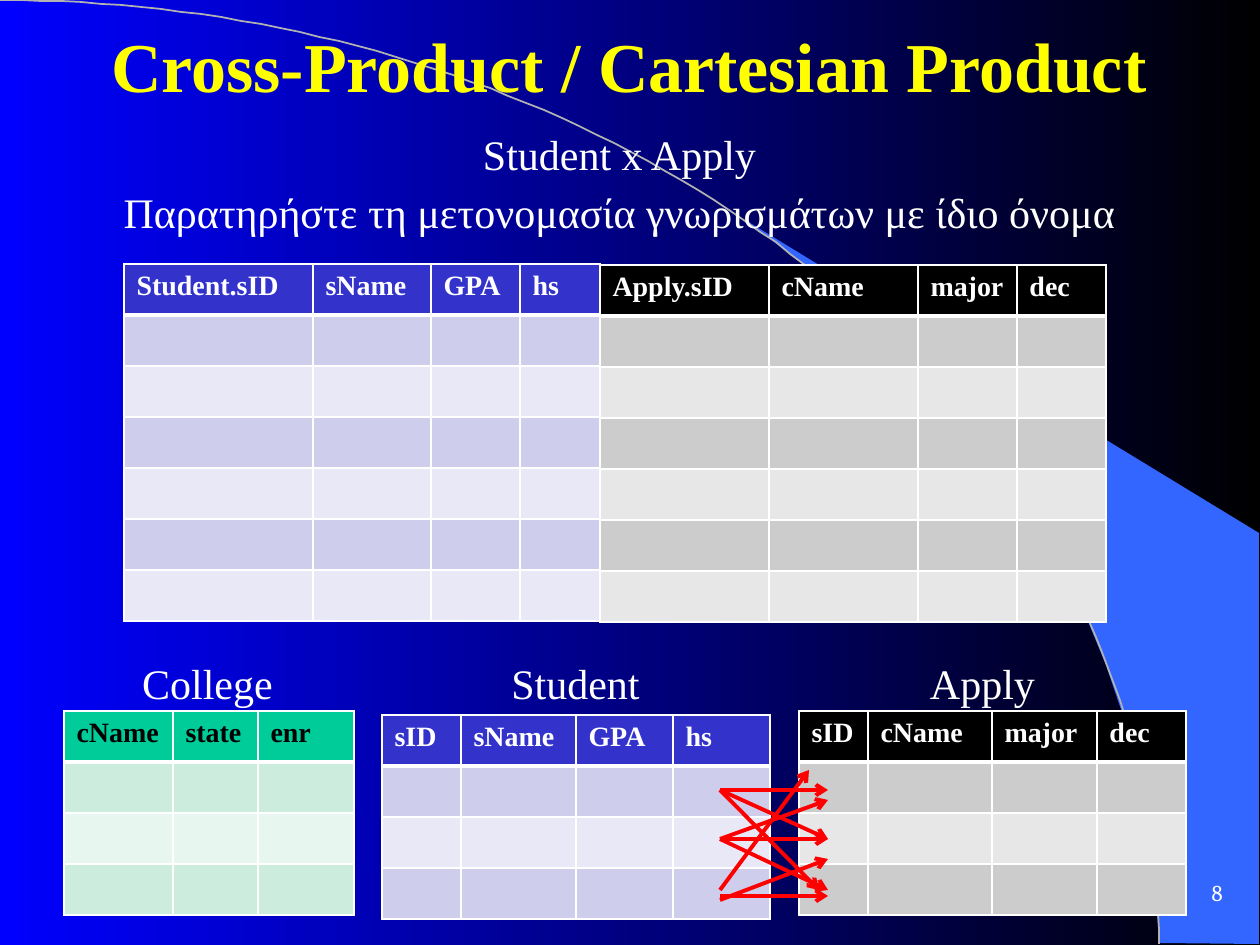
from math import cos, pi, sin

from lxml import etree
from pptx import Presentation
from pptx.dml.color import RGBColor
from pptx.enum.shapes import MSO_CONNECTOR
from pptx.enum.text import MSO_ANCHOR, MSO_AUTO_SIZE, PP_ALIGN
from pptx.oxml.ns import qn
from pptx.util import Pt

PX = 914400 / 126  # EMU per px
CENTER, LEFT, RIGHT = PP_ALIGN.CENTER, PP_ALIGN.LEFT, PP_ALIGN.RIGHT
TOP, MIDDLE = MSO_ANCHOR.TOP, MSO_ANCHOR.MIDDLE
NO_FIT, GROW = MSO_AUTO_SIZE.NONE, MSO_AUTO_SIZE.SHAPE_TO_FIT_TEXT
STRAIGHT = MSO_CONNECTOR.STRAIGHT

COLORS = {
    "blue": "0000FF", "black": "000000", "white": "FFFFFF", "yellow": "FFFF00",
    "red": "FF0000", "wedge": "3366FF", "arc": "B2B2B2",
}
# Table palettes: header fill, header text, odd rows, even rows
PALETTES = {
    "college": ("00CC99", "000000", "CCECDE", "E7F6EF"),
    "student": ("3333CC", "FFFFFF", "CECEEC", "E8E8F6"),
    "apply": ("000000", "FFFFFF", "CCCCCC", "E7E7E7"),
}


def emu(*lengths):
    return [round(v * PX) for v in lengths]


def rgb(color):
    return RGBColor.from_string(COLORS.get(color, color))


def write(p, text, size=24, color="white", bold=False, align=LEFT,
          font="Times New Roman", before=0):
    p.alignment = align
    p.space_before = Pt(before)
    r = p.add_run()
    r.text = text
    r.font.name, r.font.size, r.font.bold = font, Pt(size), bold
    r.font.color.rgb = rgb(color)


class Deck:
    row_height = 51
    cell_size = 16

    def __init__(self, width, height):
        self.prs = Presentation()
        self.prs.slide_width, self.prs.slide_height = emu(width, height)
        self.s = self.prs.slides.add_slide(self.prs.slide_layouts[1])

    def background(self, start, end):
        fill = self.s.background.fill
        fill.gradient()
        fill.gradient_angle = 0
        for stop, color in zip(fill.gradient_stops, (start, end)):
            stop.color.rgb = rgb(color)
        fill.gradient_stops[0].position = 0
        fill.gradient_stops[1].position = 1

    def freeform(self, points, fill=None, line=None):
        builder = self.s.shapes.build_freeform(*points[0], scale=PX)
        builder.add_line_segments(points[1:], close=fill is not None)
        sp = builder.convert_to_shape()
        sp.shadow.inherit = False
        if fill:
            sp.fill.solid()
            sp.fill.fore_color.rgb = rgb(fill)
        else:
            sp.fill.background()
        if line:
            sp.line.color.rgb = rgb(line)
            sp.line.width = Pt(1)
        else:
            sp.line.fill.background()

    def placeholder(self, idx, box, lines, anchor=TOP, top_inset=6, before=0, **fmt):
        sp = self.s.placeholders[idx]
        self.s.shapes._spTree.append(sp._element)  # above the backdrop
        sp.left, sp.top, sp.width, sp.height = emu(*box)
        tf = sp.text_frame
        tf.word_wrap, tf.auto_size, tf.vertical_anchor = True, NO_FIT, anchor
        tf.margin_top = emu(top_inset)[0]
        for i, line in enumerate(lines):
            p = tf.add_paragraph() if i else tf.paragraphs[0]
            pPr = p._p.get_or_add_pPr()
            pPr.set("marL", "0")
            pPr.set("indent", "0")
            etree.SubElement(pPr, qn("a:buNone"))
            write(p, line, align=CENTER, before=before if i else 0, **fmt)

    def text(self, box, text, anchor=TOP, fit=GROW, **fmt):
        tf = self.s.shapes.add_textbox(*emu(*box)).text_frame
        tf.word_wrap, tf.auto_size, tf.vertical_anchor = True, fit, anchor
        write(tf.paragraphs[0], text, **fmt)

    def border(self, cell, side, width):
        ln = etree.SubElement(cell._tc.get_or_add_tcPr(), qn(f"a:ln{side}"),
                              w=str(Pt(width)))
        fill = etree.SubElement(ln, qn("a:solidFill"))
        etree.SubElement(fill, qn("a:srgbClr"), val=COLORS["white"])

    def table(self, left, top, columns, body_rows, palette):
        header, ink, odd, even = PALETTES[palette]
        rows = body_rows + 1
        box = emu(left, top, sum(columns.values()), rows * self.row_height)
        table = self.s.shapes.add_table(rows, len(columns), *box).table
        table.horz_banding = False
        for column, width in zip(table.columns, columns.values()):
            column.width = emu(width)[0]
        for i, row in enumerate(table.rows):
            row.height = emu(self.row_height)[0]
            for name, cell in zip(columns, row.cells):
                for side in "LRTB":
                    thick = (i, side) in ((0, "B"), (1, "T"))
                    self.border(cell, side, 3 if thick else 1)
                cell.fill.solid()
                cell.fill.fore_color.rgb = rgb((odd if i % 2 else even) if i else header)
                p = cell.text_frame.paragraphs[0]
                if i:
                    etree.SubElement(p._p, qn("a:endParaRPr"),
                                     sz=str(self.cell_size * 100))
                else:
                    write(p, name, size=self.cell_size, color=ink, bold=True)

    def arrow(self, start, end):
        c = self.s.shapes.add_connector(STRAIGHT, *emu(*start, *end))
        c.line.color.rgb = rgb("red")
        c.line.width = Pt(2.25)
        etree.SubElement(c.line._get_or_add_ln(), qn("a:tailEnd"), type="arrow")
        etree.SubElement(c._element.spPr, qn("a:effectLst"))


def main():
    d = Deck(1260, 945)

    # Backdrop: gradient, blue wedge and quarter-ellipse arc
    d.background("blue", "black")
    d.freeform([(1159, 943), (1259, 944), (1259, 533), (742, 218), (786, 251),
                (823, 280), (863, 315), (902, 353), (960, 416), (1012, 484),
                (1048, 543), (1081, 604), (1106, 665), (1125, 721), (1138, 767),
                (1150, 827), (1155, 877)], fill="wedge")
    steps = 90
    angles = [pi / 2 * i / steps for i in range(steps + 1)]
    d.freeform([(1159 * sin(a), 944 * (1 - cos(a))) for a in angles], line="arc")

    # Slide number, title and body
    d.text((1164, 861, 71, 63), "8", anchor=MIDDLE, fit=NO_FIT, size=13,
           align=RIGHT, font="Cambria")
    d.placeholder(0, (88, 0, 1082, 129), ["Cross-Product / Cartesian Product"],
                  anchor=MIDDLE, size=40, color="yellow", bold=True)
    d.placeholder(1, (84, 116, 1071, 567),
                  ["Student x Apply",
                   "Παρατηρήστε τη μετονομασία γνωρισμάτων με ίδιο όνομα"],
                  top_inset=12, before=4.8)

    # Source relations
    d.table(64, 711, {"cName": 109, "state": 85, "enr": 96}, 3, "college")
    d.table(382, 715, {"sID": 79, "sName": 115, "GPA": 97, "hs": 97}, 3, "student")
    d.table(799, 711, {"sID": 69, "cName": 124, "major": 105, "dec": 89}, 3, "apply")
    for left, name in ((113, "College"), (481, "Student"), (888, "Apply")):
        d.text((left, 651, 189, 64), name, align=CENTER)

    # Cross-product result
    d.table(124, 264, {"Student.sID": 189, "sName": 118, "GPA": 89, "hs": 80},
            6, "student")
    d.table(600, 265, {"Apply.sID": 169, "cName": 149, "major": 99, "dec": 89},
            6, "apply")

    # Every Student row pairs with every Apply row
    pairs = {
        790: [(828, 790), (828, 839), (819, 890)],
        839: [(828, 839), (828, 890), (828, 800)],
        896: [(828, 896)],
        890: [(809, 770)],
        900: [(828, 859)],
    }
    for y, ends in pairs.items():
        for end in ends:
            d.arrow((720, y), end)

    d.prs.save("out.pptx")


if __name__ == "__main__":
    main()
